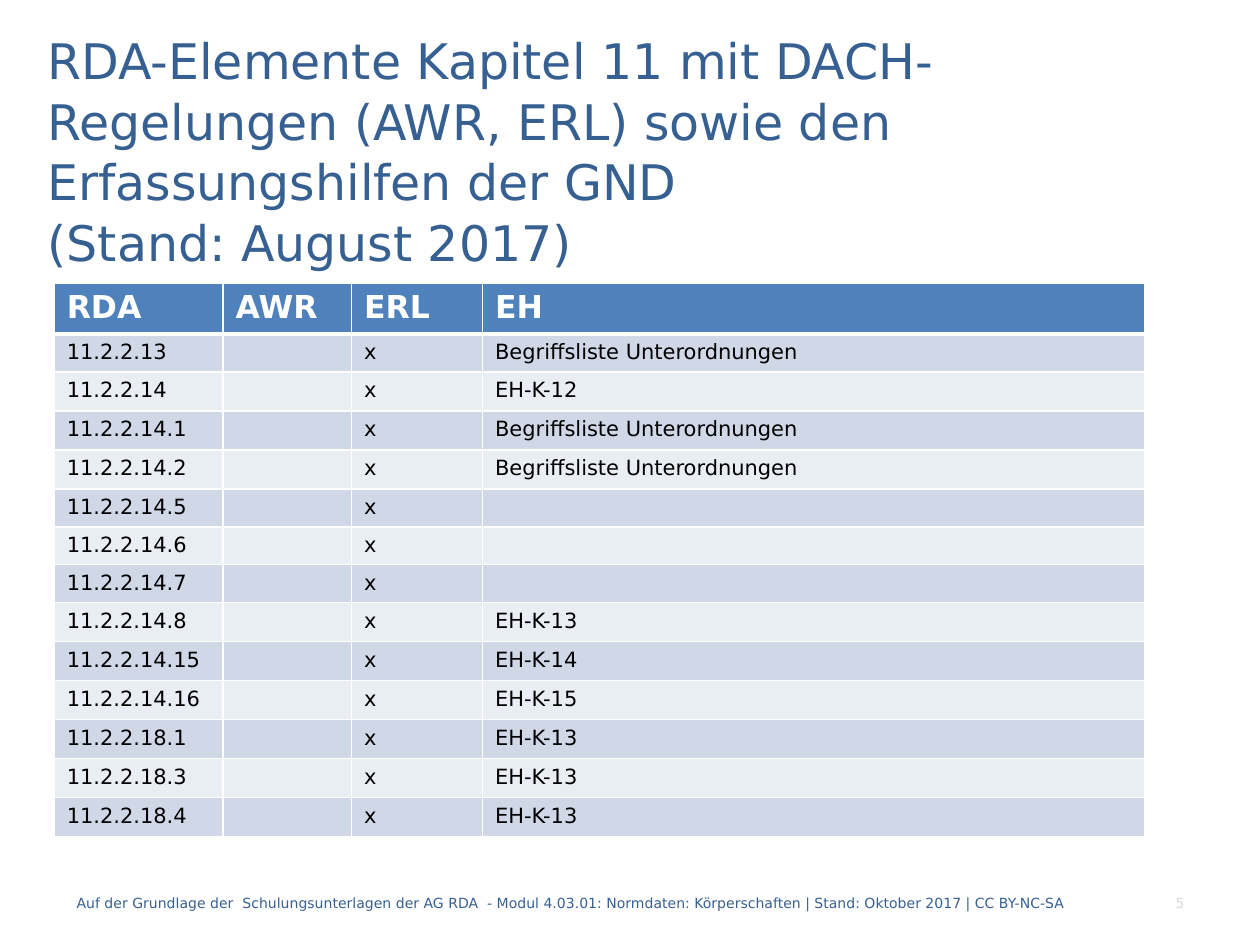
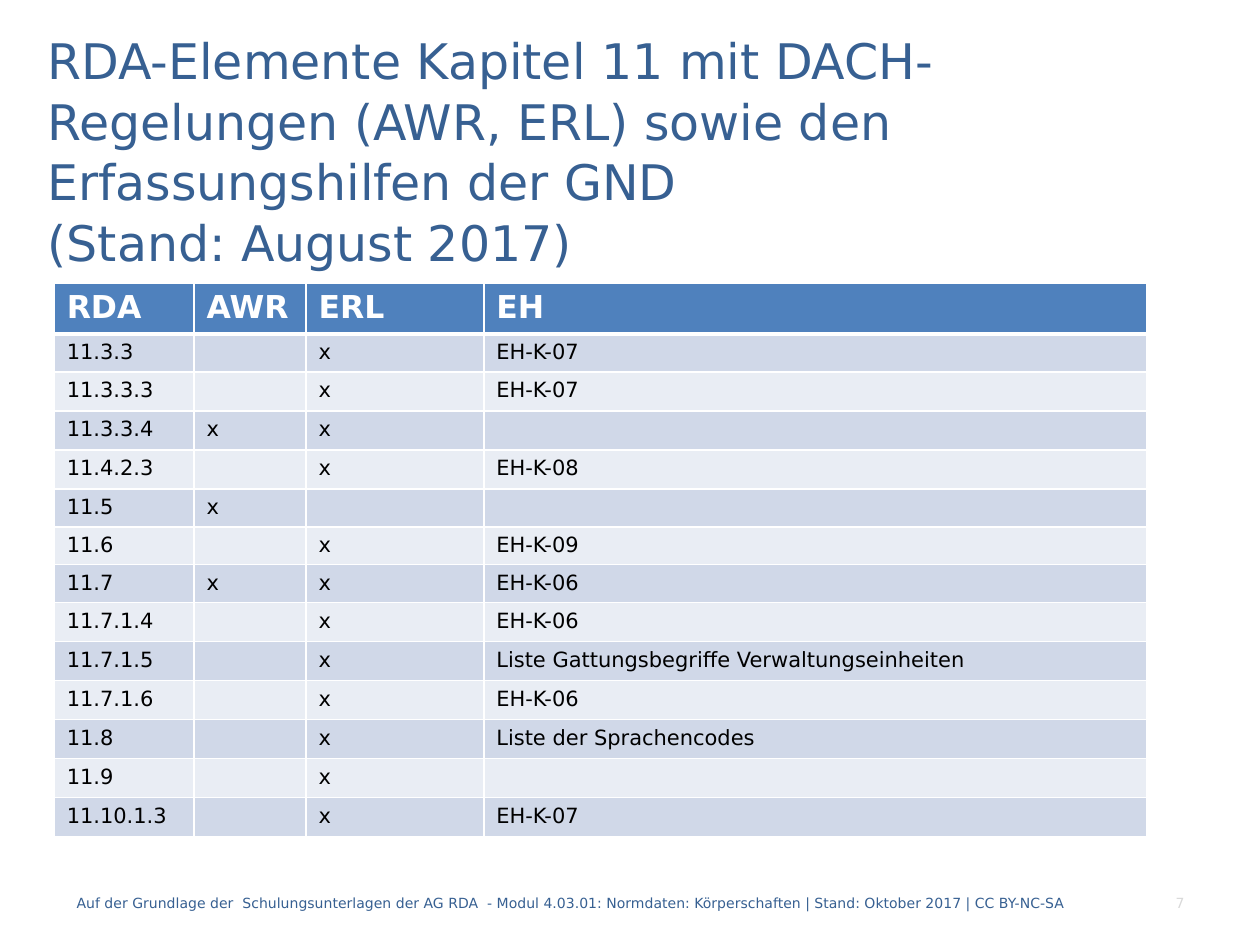
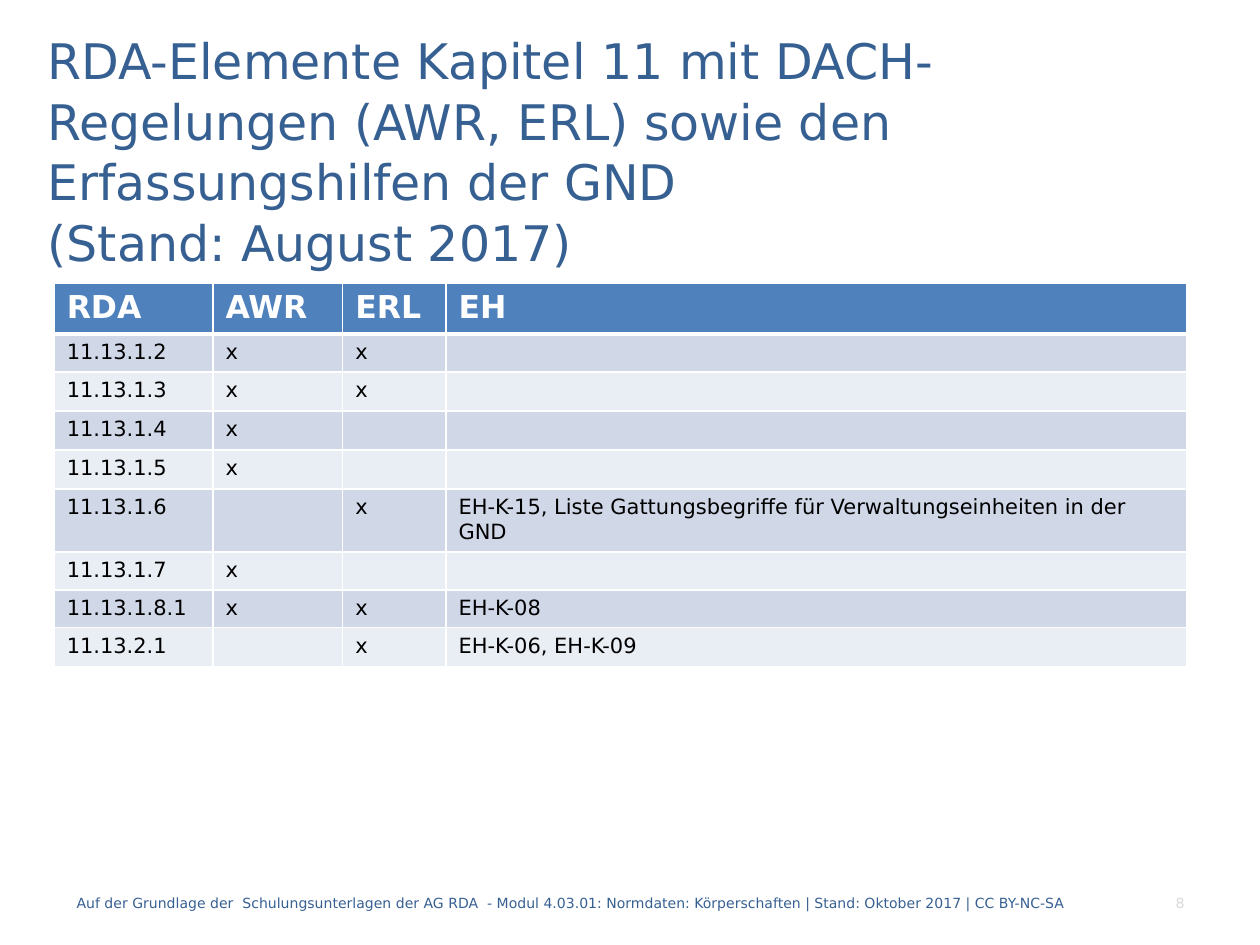
import dataclasses

import lxml.etree
import pptx
import pptx.dml.color
import pptx.enum.text
import pptx.oxml.ns
import pptx.util

Inches = pptx.util.Inches
Pt = pptx.util.Pt
qn = pptx.oxml.ns.qn


@dataclasses.dataclass(frozen=True)
class Theme:
    font: str = "DejaVu Sans"
    heading: str = "376092"
    muted: str = "D9D9D9"
    white: str = "FFFFFF"
    black: str = "000000"
    header_fill: str = "4F81BD"
    bands: tuple = ("D0D8E8", "E9EDF4")
    title_size: int = 28
    header_size: int = 18
    body_size: int = 12
    footer_size: int = 8
    title_spacing: float = 1.03
    rule: int = 1
    header_rule: int = 3


THEME = Theme()

TITLE_LINES = (
    "RDA-Elemente Kapitel 11 mit DACH-Regelungen (AWR, ERL) sowie den Erfassungshilfen der GND ",
    "(Stand: August 2017)",
)
FOOTER = (
    "Auf der Grundlage der  Schulungsunterlagen der AG RDA  - Modul 4.03.01: "
    "Normdaten: Körperschaften | Stand: Oktober 2017 | CC BY-NC-SA"
)
TITLE_BOX = (0.28, 0.91, 9.45, 0.56)
FOOTER_BOX = (0.51, 6.97, 8.58, 0.4)
NUMBER_BOX = (7.91, 6.97, 1.59, 0.4)
TABLE_ORIGIN = (0.43, 2.25)

COLUMN_NAMES = ("RDA", "AWR", "ERL", "EH")
HEADER_HEIGHT = 0.38
ROW_HEIGHT = 0.31
COMPACT_HEIGHT = 0.29
COMPACT_ROWS = (1, 5, 6, 7)

SUBORDINATE_LIST = "Begriffsliste Unterordnungen"

# Page number, column widths, rows of (RDA, AWR, ERL, EH)
PAGES = (
    (5, (1.34, 1.02, 1.04, 5.26), (
        ("11.2.2.13", "", "x", SUBORDINATE_LIST),
        ("11.2.2.14", "", "x", "EH-K-12"),
        ("11.2.2.14.1", "", "x", SUBORDINATE_LIST),
        ("11.2.2.14.2", "", "x", SUBORDINATE_LIST),
        ("11.2.2.14.5", "", "x", ""),
        ("11.2.2.14.6", "", "x", ""),
        ("11.2.2.14.7", "", "x", ""),
        ("11.2.2.14.8", "", "x", "EH-K-13"),
        ("11.2.2.14.15", "", "x", "EH-K-14"),
        ("11.2.2.14.16", "", "x", "EH-K-15"),
        ("11.2.2.18.1", "", "x", "EH-K-13"),
        ("11.2.2.18.3", "", "x", "EH-K-13"),
        ("11.2.2.18.4", "", "x", "EH-K-13"),
    )),
    (7, (1.11, 0.89, 1.41, 5.26), (
        ("11.3.3", "", "x", "EH-K-07"),
        ("11.3.3.3", "", "x", "EH-K-07"),
        ("11.3.3.4", "x", "x", ""),
        ("11.4.2.3", "", "x", "EH-K-08"),
        ("11.5", "x", "", ""),
        ("11.6", "", "x", "EH-K-09"),
        ("11.7", "x", "x", "EH-K-06"),
        ("11.7.1.4", "", "x", "EH-K-06"),
        ("11.7.1.5", "", "x", "Liste Gattungsbegriffe Verwaltungseinheiten"),
        ("11.7.1.6", "", "x", "EH-K-06"),
        ("11.8", "", "x", "Liste der Sprachencodes"),
        ("11.9", "", "x", ""),
        ("11.10.1.3", "", "x", "EH-K-07"),
    )),
    (8, (1.26, 1.03, 0.82, 5.88), (
        ("11.13.1.2", "x", "x", ""),
        ("11.13.1.3", "x", "x", ""),
        ("11.13.1.4", "x", "", ""),
        ("11.13.1.5", "x", "", ""),
        ("11.13.1.6", "", "x",
         "EH-K-15, Liste Gattungsbegriffe für Verwaltungseinheiten in der GND"),
        ("11.13.1.7", "x", "", ""),
        ("11.13.1.8.1", "x", "x", "EH-K-08"),
        ("11.13.2.1", "", "x", "EH-K-06, EH-K-09"),
    )),
)


def rgb(color):
    return pptx.dml.color.RGBColor.from_string(color)


def add_span(para, text, size, color, bold=False):
    span = para.add_run()
    span.text = text
    span.font.name = THEME.font
    span.font.size = Pt(size)
    span.font.bold = bold
    span.font.color.rgb = rgb(color)


def add_text_box(page, box, lines, size, color):
    """Add a vertically centred text box and return its paragraph."""
    frame = page.shapes.add_textbox(*map(Inches, box)).text_frame
    frame.word_wrap = True
    frame.vertical_anchor = pptx.enum.text.MSO_ANCHOR.MIDDLE
    para = frame.paragraphs[0]
    for index, line in enumerate(lines):
        if index:
            para.add_line_break()
        add_span(para, line, size, color)
    return para


def add_title(page, box):
    para = add_text_box(page, box, TITLE_LINES, THEME.title_size, THEME.heading)
    para.line_spacing = THEME.title_spacing


def add_footer(page, box, number_box, number):
    add_text_box(page, box, [FOOTER], THEME.footer_size, THEME.heading)
    para = add_text_box(page, number_box, [str(number)], THEME.footer_size, THEME.muted)
    para.alignment = pptx.enum.text.PP_ALIGN.RIGHT


def set_borders(cell, top, bottom):
    """Draw white cell borders; the lines must precede the fill in the XML."""
    properties = cell._tc.get_or_add_tcPr()
    widths = {"lnL": THEME.rule, "lnR": THEME.rule, "lnT": top, "lnB": bottom}
    for index, (side, width) in enumerate(widths.items()):
        line = lxml.etree.Element(qn(f"a:{side}"), w=str(Pt(width)))
        fill = lxml.etree.SubElement(line, qn("a:solidFill"))
        lxml.etree.SubElement(fill, qn("a:srgbClr"), val=THEME.white)
        properties.insert(index, line)


def fill_cell(cell, text, row_index):
    is_header = row_index == 0
    size = THEME.header_size if is_header else THEME.body_size
    color = THEME.white if is_header else THEME.black
    background = THEME.header_fill if is_header else THEME.bands[(row_index - 1) % 2]
    cell.fill.solid()
    cell.fill.fore_color.rgb = rgb(background)
    set_borders(
        cell,
        top=THEME.header_rule if row_index == 1 else THEME.rule,
        bottom=THEME.header_rule if is_header else THEME.rule,
    )
    para = cell.text_frame.paragraphs[0]
    if text:
        add_span(para, text, size, color, bold=is_header)
    else:
        # Keeps an empty cell from stretching its row
        lxml.etree.SubElement(para._p, qn("a:endParaRPr"), sz=str(size * 100))


def row_height(row_index):
    if row_index == 0:
        return HEADER_HEIGHT
    return COMPACT_HEIGHT if row_index in COMPACT_ROWS else ROW_HEIGHT


def add_rule_table(page, origin, widths, records):
    rows = (COLUMN_NAMES, *records)
    heights = [row_height(index) for index in range(len(rows))]
    box = (*origin, sum(widths), sum(heights))
    table = page.shapes.add_table(len(rows), len(widths), *map(Inches, box)).table
    table.horz_banding = False
    for column, width in zip(table.columns, widths):
        column.width = Inches(width)
    for row_index, (row, height, texts) in enumerate(zip(table.rows, heights, rows)):
        row.height = Inches(height)
        for cell, text in zip(row.cells, texts):
            fill_cell(cell, text, row_index)


def add_page(deck, number, widths, records):
    page = deck.slides.add_slide(deck.slide_layouts[6])
    add_title(page, TITLE_BOX)
    add_footer(page, FOOTER_BOX, NUMBER_BOX, number)
    add_rule_table(page, TABLE_ORIGIN, widths, records)


def main():
    deck = pptx.Presentation()
    deck.slide_width = Inches(10)
    deck.slide_height = Inches(7.5)
    for number, widths, records in PAGES:
        add_page(deck, number, widths, records)
    deck.save("out.pptx")


if __name__ == "__main__":
    main()
